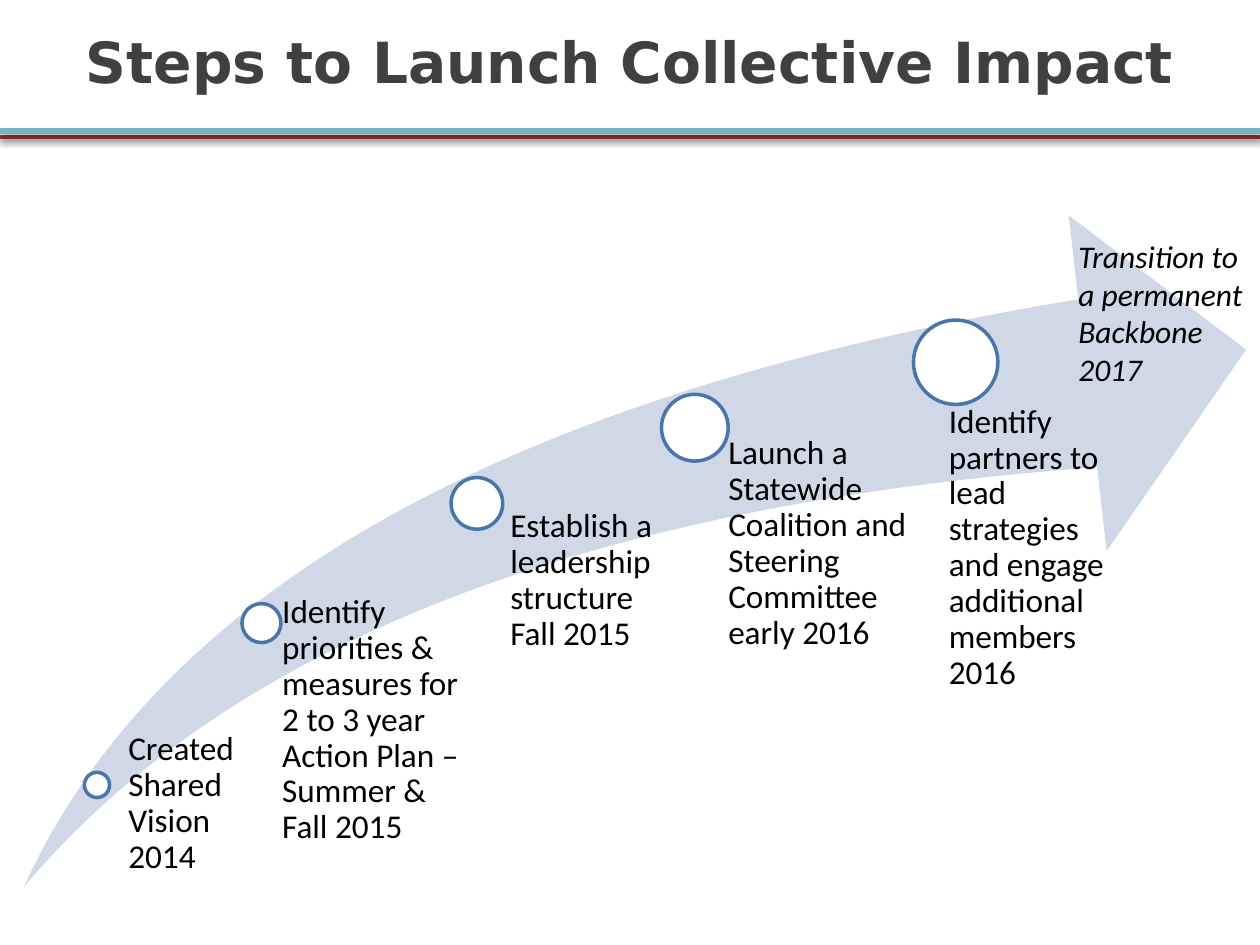
from dataclasses import dataclass

from lxml.etree import SubElement
from pptx import Presentation
from pptx.dml.color import RGBColor
from pptx.enum.shapes import MSO_CONNECTOR, MSO_SHAPE
from pptx.enum.text import MSO_ANCHOR, MSO_AUTO_SIZE, PP_ALIGN
from pptx.oxml.ns import qn
from pptx.util import Inches, Pt


@dataclass(frozen=True)
class Theme:
    title_font: str = "DejaVu Sans"
    body_font: str = "Calibri"
    title_size: float = 32.4
    step_size: float = 19
    outcome_size: float = 18
    title_color: str = "404040"
    text_color: str = "000000"
    maroon: str = "993235"
    teal: str = "76B5BE"
    swoosh: str = "D0D8E8"
    marker_fill: str = "FFFFFF"
    marker_line: str = "4875AC"


class SlideBuilder:
    def __init__(self, slide, theme):
        self.slide = slide
        self.theme = theme
        self.diagram = None

    def rule(self, y, color, weight):
        """Full-width line with a soft shadow below it."""
        line = self.slide.shapes.add_connector(
            MSO_CONNECTOR.STRAIGHT, 0, Inches(y), Inches(10), Inches(y))
        line.line.color.rgb = RGBColor.from_string(color)
        line.line.width = Pt(weight)
        effects = SubElement(line._element.spPr, qn("a:effectLst"))
        shadow = SubElement(effects, qn("a:outerShdw"), blurRad=str(Pt(3.1)),
                            dist=str(Pt(1.6)), dir="5400000", rotWithShape="0")
        black = SubElement(shadow, qn("a:srgbClr"), val="000000")
        SubElement(black, qn("a:alpha"), val="38000")

    def start_diagram(self):
        self.diagram = self.slide.shapes.add_group_shape()

    def shape(self, preset, left, top, width, height, fill, outline=None):
        shape = self.diagram.shapes.add_shape(
            preset, Inches(left), Inches(top), Inches(width), Inches(height))
        shape.shadow.inherit = False
        shape.fill.solid()
        shape.fill.fore_color.rgb = RGBColor.from_string(fill)
        if outline:
            shape.line.color.rgb = RGBColor.from_string(outline)
            shape.line.width = Pt(2)
        else:
            shape.line.fill.background()
        return shape

    def marker(self, left, top, diameter):
        self.shape(MSO_SHAPE.OVAL, left, top, diameter, diameter,
                   self.theme.marker_fill, self.theme.marker_line)

    def text(self, parent, lines, box, font, size, color, bold=None, italic=None):
        textbox = parent.shapes.add_textbox(*map(Inches, box))
        frame = textbox.text_frame
        frame.word_wrap = True
        paragraph = frame.paragraphs[0]
        for index, line in enumerate(lines):
            if index:
                paragraph.add_line_break()
            run = paragraph.add_run()
            run.text = line
            run.font.name = font
            run.font.size = Pt(size)
            run.font.bold = bold
            run.font.italic = italic
            run.font.color.rgb = RGBColor.from_string(color)
        return frame

    def title(self, words):
        frame = self.text(self.slide, [words], (0.5, 0, 9, 0.97), self.theme.title_font,
                          self.theme.title_size, self.theme.title_color, bold=True)
        frame.vertical_anchor = MSO_ANCHOR.MIDDLE
        frame.paragraphs[0].alignment = PP_ALIGN.CENTER

    def step_label(self, lines, box, indent):
        frame = self.text(self.diagram, lines, box, self.theme.body_font,
                          self.theme.step_size, self.theme.text_color)
        frame.margin_left = Inches(indent)
        frame.margin_top = frame.margin_right = frame.margin_bottom = 0
        frame.paragraphs[0].line_spacing = 0.9

    def outcome(self, words, box):
        frame = self.text(self.slide, [words], box, self.theme.body_font,
                          self.theme.outcome_size, self.theme.text_color, italic=True)
        frame.auto_size = MSO_AUTO_SIZE.SHAPE_TO_FIT_TEXT


# Each step: marker (left, top, diameter), label box, label indent, label lines
STEPS = [
    ((0.67, 6.13, 0.2), (0.92, 5.81, 1.12, 1.27), 0.1,
     ["Created Shared Vision 2014"]),
    ((1.92, 4.79, 0.31), (2.08, 4.72, 1.58, 2.4), 0.16,
     ["Identify priorities & measures for 2 to 3 year Action Plan – Summer & Fall 2015"]),
    ((3.58, 3.79, 0.41), (3.83, 4.04, 1.65, 3), 0.22,
     ["Establish a leadership structure", "Fall 2015"]),
    ((5.25, 3.13, 0.53), (5.5, 3.46, 1.71, 3.57), 0.28,
     ["Launch a Statewide Coalition and Steering Committee early 2016"]),
    ((7.25, 2.54, 0.67), (7.17, 3.21, 1.71, 3.59), 0.36,
     ["Identify partners to lead strategies and engage additional members 2016"]),
]


def main():
    deck = Presentation()
    deck.slide_width, deck.slide_height = Inches(10), Inches(7.5)
    theme = Theme()
    builder = SlideBuilder(deck.slides.add_slide(deck.slide_layouts[6]), theme)

    # Header
    builder.rule(1.09, theme.maroon, 2.5)
    builder.rule(1.04, theme.teal, 3.5)
    builder.title("Steps to Launch Collective Impact")

    # Rising arrow with its steps
    builder.start_diagram()
    arrow = builder.shape(MSO_SHAPE.SWOOSH_ARROW, 0.19, 1.71, 9.7, 5.33, theme.swoosh)
    arrow.adjustments[0] = arrow.adjustments[1] = 0.25
    for marker, label_box, indent, lines in STEPS:
        builder.marker(*marker)
        builder.step_label(lines, label_box, indent)

    # Outcome at the arrowhead
    builder.outcome("Transition to a permanent Backbone 2017", (8.46, 1.83, 1.58, 1.31))

    deck.save("out.pptx")


if __name__ == "__main__":
    main()
